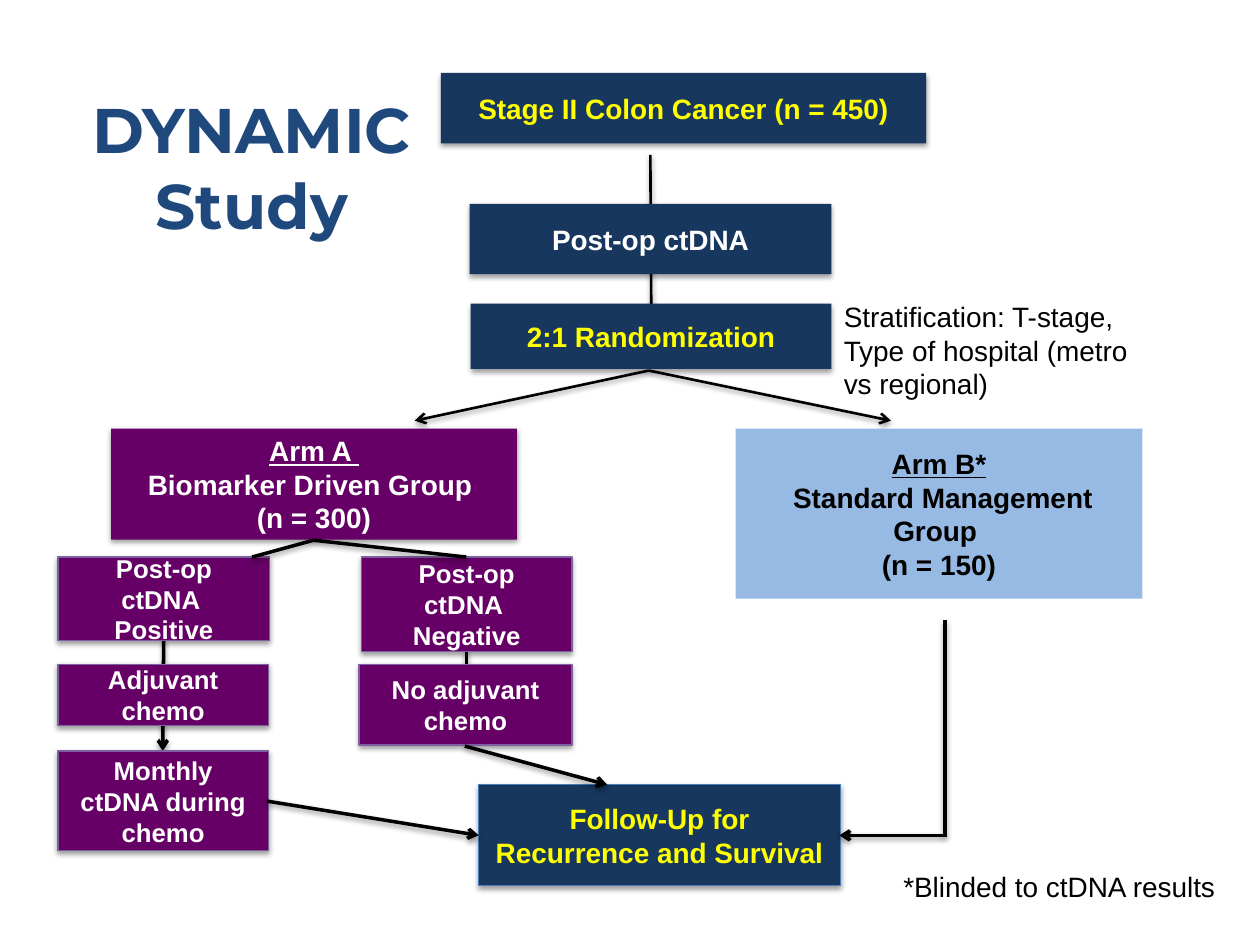
from dataclasses import dataclass
from lxml.etree import SubElement
from pptx import Presentation
from pptx.dml.color import RGBColor
from pptx.enum.shapes import MSO_CONNECTOR, MSO_SHAPE
from pptx.enum.text import MSO_ANCHOR, MSO_AUTO_SIZE, PP_ALIGN
from pptx.oxml.ns import qn
from pptx.slide import Slide
from pptx.util import Cm, Pt

NAVY, PLUM, SKY = "17375E", "660066", "97BAE5"
YELLOW, WHITE, BLACK = "FFFF00", "FFFFFF", "000000"
MAUVE, BLUE, INK = "7D60A0", "4B7EBC", "1F497D"


def tint(code):
    return RGBColor.from_string(code)


def shade(effects):
    outer = SubElement(effects, qn("a:outerShdw"), blurRad=str(Pt(3.1)),
                       dist=str(Pt(1.6)), dir="5400000", rotWithShape="0")
    color = SubElement(outer, qn("a:srgbClr"), val=BLACK)
    SubElement(color, qn("a:alpha"), val="38000")


def write(frame, lines, size, color, bold=True, align=PP_ALIGN.CENTER, face="Arial"):
    frame.text = "\n".join(lines)
    for part in frame.paragraphs:
        part.alignment = align
        font = part.font
        font.name, font.size, font.bold = face, Pt(size), bold
        font.color.rgb = tint(color)


@dataclass
class Area:
    page: Slide
    left: float
    top: float

    def spot(self, x, y):
        return Cm(self.left + x), Cm(self.top + y)

    def card(self, x, y, wide, high, lines, fill, color=WHITE, size=16,
             edge=None, shadow=True):
        shape = self.page.shapes.add_shape(
            MSO_SHAPE.RECTANGLE, *self.spot(x, y), Cm(wide), Cm(high))
        shape.fill.solid()
        shape.fill.fore_color.rgb = tint(fill)
        if edge:
            shape.line.color.rgb = tint(edge)
            shape.line.width = Pt(0.75)
        else:
            shape.line.fill.background()
        shape.shadow.inherit = False
        if shadow:
            shade(shape._element.spPr.find(qn("a:effectLst")))
        frame = shape.text_frame
        frame.word_wrap = True
        frame.vertical_anchor = MSO_ANCHOR.MIDDLE
        frame.margin_left = frame.margin_right = Cm(0.33)
        frame.margin_top = frame.margin_bottom = Cm(0.18)
        write(frame, lines, size, color)
        return frame

    def link(self, start, end, width=2, arrow=False):
        line = self.page.shapes.add_connector(
            MSO_CONNECTOR.STRAIGHT, *self.spot(*start), *self.spot(*end))
        line.line.color.rgb = tint(BLACK)
        line.line.width = Pt(width)
        props = line._element.spPr
        if arrow:
            SubElement(props.find(qn("a:ln")), qn("a:tailEnd"), type="arrow")
        shade(SubElement(props, qn("a:effectLst")))

    def note(self, x, y, wide, high, text, wrap):
        shape = self.page.shapes.add_textbox(*self.spot(x, y), Cm(wide), Cm(high))
        shape.text_frame.word_wrap = wrap
        write(shape.text_frame, [text], 16, BLACK, False, PP_ALIGN.LEFT)


def head(page, left, top, wide, high):
    title = page.shapes.title
    title.left, title.top, title.width, title.height = map(Cm, (left, top, wide, high))
    frame = title.text_frame
    write(frame, ["DYNAMIC", "Study"], 36, INK, face="Montserrat")
    frame.word_wrap = False
    frame.auto_size = MSO_AUTO_SIZE.NONE
    frame.vertical_anchor = MSO_ANCHOR.TOP


def entry(page, left, top):
    area = Area(page, left, top)
    area.link((4.24, 4.96), (4.22, 1.65), 1.5)
    for x in (9.07, -0.53):
        area.link((4.19, 6), (x, 7.01), 1.5, True)
    area.card(0, 0, 9.78, 1.42, ["Stage II Colon Cancer (n = 450)"], NAVY, YELLOW)
    area.card(0.58, 2.64, 7.29, 1.42, ["Post-op ctDNA"], NAVY)
    area.card(0.6, 4.65, 7.27, 1.32, ["2:1 Randomization"], NAVY, YELLOW)
    area.note(7.87, 4.45, 6.5, 2.31,
              "Stratification: T-stage, Type of hospital (metro vs regional)", True)


def guided(page, left, top):
    area = Area(page, left, top)
    area.link((8.23, 4.49), (8.23, 5.1))
    area.link((2.13, 4.24), (2.11, 6.5), arrow=True)
    arm = area.card(1.07, 0, 8.18, 2.24,
                    ["Arm A ", "Biomarker Driven Group ", "(n = 300)"], PLUM)
    arm.paragraphs[0].font.underline = True
    steps = [
        (0, 2.59, 4.27, 1.68, ["Post-op ctDNA ", "Positive"]),
        (6.12, 2.59, 4.24, 1.91, ["Post-op ctDNA ", "Negative"]),
        (0, 4.75, 4.24, 1.24, ["Adjuvant chemo"]),
        (6.07, 4.75, 4.29, 1.63, ["No adjuvant chemo"]),
        (0, 6.5, 4.24, 2.01, ["Monthly ctDNA during chemo"]),
    ]
    for step in steps:
        area.card(*step, PLUM, size=14.7, edge=MAUVE)
    for x in (3.91, 8.23):
        area.link((5.15, 2.25), (x, 2.59))


def standard(page, left, top):
    area = Area(page, left, top)
    arm = area.card(0, 0, 8.2, 3.43,
                    ["Arm B*", " Standard Management Group ", "(n = 150)"],
                    SKY, BLACK, shadow=False)
    arm.paragraphs[0].font.underline = True


def follow(page, left, top):
    area = Area(page, left, top)
    area.card(0, 0, 7.29, 2.03, ["Follow-Up for Recurrence and Survival"],
              NAVY, YELLOW, edge=BLUE)
    area.link((-0.28, -0.78), (2.59, 0), arrow=True)
    area.link((9.4, 1.02), (7.27, 1.02), arrow=True)
    area.link((9.4, -3.32), (9.4, 1.05))
    area.link((-4.27, 0.33), (0, 1.02), arrow=True)
    area.note(8.31, 1.58, 6.88, 0.94, "*Blinded to ctDNA results", False)


def main():
    deck = Presentation()
    deck.slide_width, deck.slide_height = Cm(25.4), Cm(19.05)
    page = deck.slides.add_slide(deck.slide_layouts[5])
    head(page, 1.47, 1.7, 7.21, 3.33)
    entry(page, 8.89, 1.47)
    guided(page, 1.17, 8.64)
    standard(page, 14.83, 8.64)
    follow(page, 9.65, 15.82)
    deck.save("out.pptx")


if __name__ == "__main__":
    main()
